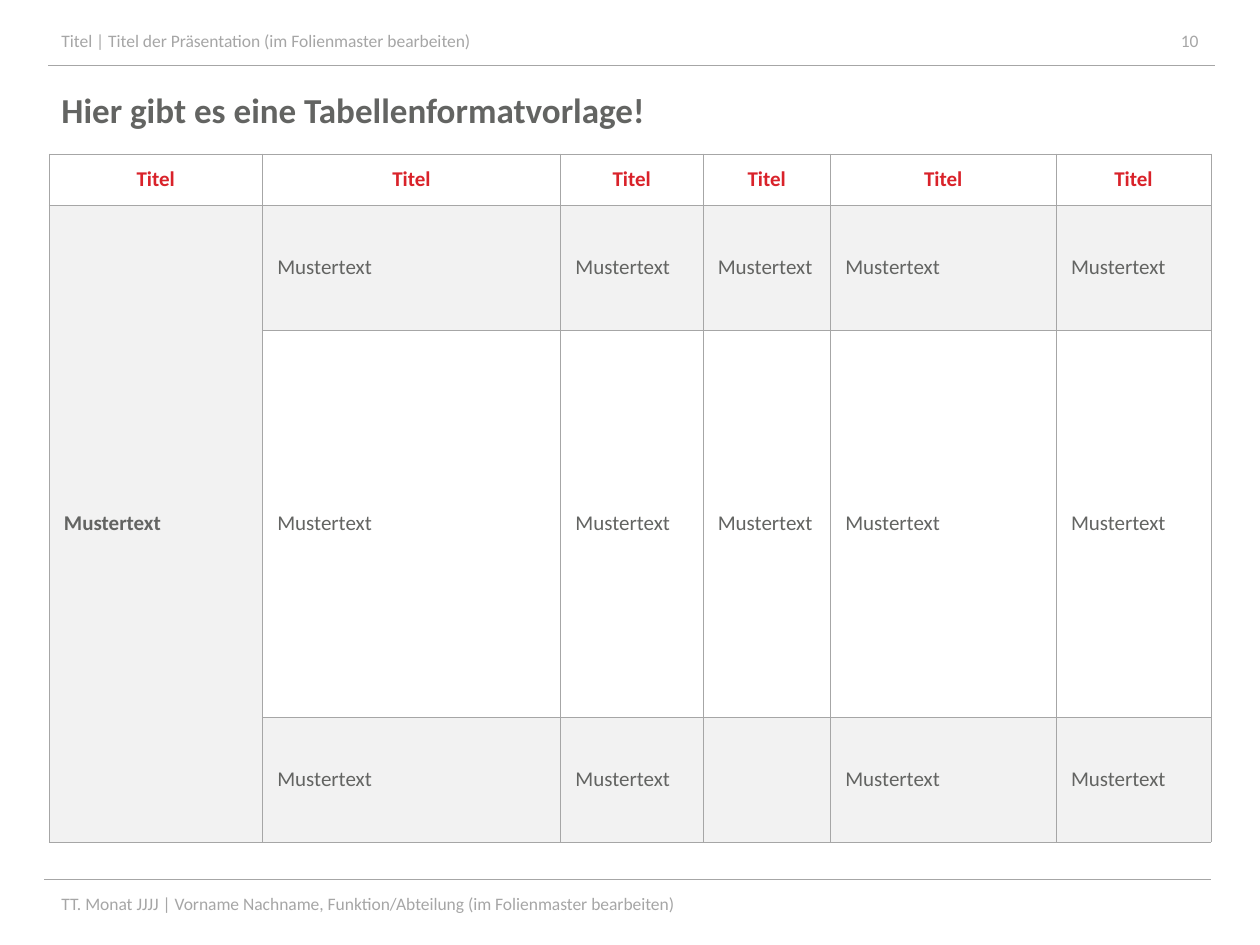
from dataclasses import dataclass

from lxml import etree
from pptx import Presentation
from pptx.dml.color import RGBColor
from pptx.enum.shapes import MSO_CONNECTOR
from pptx.enum.text import MSO_ANCHOR, PP_ALIGN
from pptx.oxml.ns import qn
from pptx.slide import Slide
from pptx.table import Table, _Cell
from pptx.text.text import _Paragraph
from pptx.util import Cm, Pt

STRAIGHT = MSO_CONNECTOR.STRAIGHT
TOP, MIDDLE = MSO_ANCHOR.TOP, MSO_ANCHOR.MIDDLE
LEFT, CENTER, RIGHT = PP_ALIGN.LEFT, PP_ALIGN.CENTER, PP_ALIGN.RIGHT

FONT = "Calibri"
GREY, DARK, RED, BAND = "A6A6A6", "636462", "D9222A", "F2F2F2"
RULE_WIDTH = Pt(0.25)

COLUMN_WIDTHS = [4.3, 6.01, 2.87, 2.57, 4.55, 3.12]
ROW_HEIGHTS = [1.03, 2.52, 7.8, 2.52]
SAMPLE = "Mustertext"
ROWS = [
    ["Titel"] * 6,
    [SAMPLE] * 6,
    [""] + [SAMPLE] * 5,
    ["", SAMPLE, SAMPLE, "", SAMPLE, SAMPLE],
]


@dataclass
class TextStyle:
    size: int
    color: str
    bold: bool = False
    alignment: PP_ALIGN = LEFT


@dataclass
class Label:
    text: str
    left: float
    top: float
    width: float
    height: float
    style: TextStyle
    anchor: MSO_ANCHOR = TOP


@dataclass
class Rule:
    left: float
    top: float
    width: float


SMALL = TextStyle(10, GREY)
HEADING = TextStyle(20, DARK, bold=True)
PAGE_NUMBER = TextStyle(10, GREY, alignment=RIGHT)
COLUMN_TITLE = TextStyle(12, RED, bold=True, alignment=CENTER)
ROW_TITLE = TextStyle(12, DARK, bold=True)
BODY = TextStyle(12, DARK)

LABELS = [
    Label("Titel | Titel der Präsentation (im Folienmaster bearbeiten)",
          0.99, 0.48, 17.7, 0.69, SMALL),
    Label("TT. Monat JJJJ | Vorname Nachname, Funktion/Abteilung (im Folienmaster bearbeiten)",
          0.99, 17.88, 17.7, 0.69, SMALL),
    Label("Hier gibt es eine Tabellenformatvorlage!", 0.99, 1.65, 17.7, 1.12, HEADING),
    Label("10", 18.69, 0.48, 5.72, 0.69, PAGE_NUMBER, MIDDLE),
]
RULES = [Rule(0.97, 1.32, 23.52), Rule(0.89, 17.73, 23.52)]


def rgb(color: str) -> RGBColor:
    return RGBColor.from_string(color)


def write(paragraph: _Paragraph, text: str, style: TextStyle) -> None:
    paragraph.text = text
    paragraph.alignment = style.alignment
    paragraph.font.name = FONT
    paragraph.font.size = Pt(style.size)
    paragraph.font.bold = style.bold
    paragraph.font.color.rgb = rgb(style.color)


def draw_label(slide: Slide, label: Label) -> None:
    shape = slide.shapes.add_textbox(
        Cm(label.left), Cm(label.top), Cm(label.width), Cm(label.height))
    shape.text_frame.word_wrap = True
    shape.text_frame.vertical_anchor = label.anchor
    write(shape.text_frame.paragraphs[0], label.text, label.style)


def draw_rule(slide: Slide, rule: Rule) -> None:
    connector = slide.shapes.add_connector(
        STRAIGHT, Cm(rule.left), Cm(rule.top), Cm(rule.left + rule.width), Cm(rule.top))
    connector.line.color.rgb = rgb(GREY)
    connector.line.width = RULE_WIDTH
    etree.SubElement(connector._element.spPr, qn("a:effectLst"))


def add_borders(cell: _Cell) -> None:
    properties = cell._tc.get_or_add_tcPr()
    for side in ("lnL", "lnR", "lnT", "lnB"):
        border = etree.SubElement(properties, qn(f"a:{side}"), w=str(RULE_WIDTH))
        fill = etree.SubElement(border, qn("a:solidFill"))
        etree.SubElement(fill, qn("a:srgbClr"), val=GREY)


def format_cell(cell: _Cell, text: str, row: int, column: int) -> None:
    add_borders(cell)
    if row % 2 or (row and column == 0):
        cell.fill.solid()
        cell.fill.fore_color.rgb = rgb(BAND)
    else:
        cell.fill.background()
    cell.vertical_anchor = MIDDLE
    if row:
        cell.margin_left = cell.margin_right = Cm(0.3)
        cell.margin_top = cell.margin_bottom = Cm(0.2)
    style = COLUMN_TITLE if row == 0 else ROW_TITLE if column == 0 else BODY
    write(cell.text_frame.paragraphs[0], text, style)


def draw_table(slide: Slide) -> Table:
    table = slide.shapes.add_table(
        len(ROW_HEIGHTS), len(COLUMN_WIDTHS), Cm(0.99), Cm(3.1),
        Cm(sum(COLUMN_WIDTHS)), Cm(sum(ROW_HEIGHTS))).table
    table.first_row = table.horz_banding = False
    for column, width in zip(table.columns, COLUMN_WIDTHS):
        column.width = Cm(width)
    for row, height in zip(table.rows, ROW_HEIGHTS):
        row.height = Cm(height)
    for row_index, texts in enumerate(ROWS):
        for column_index, text in enumerate(texts):
            format_cell(table.cell(row_index, column_index), text, row_index, column_index)
    table.cell(1, 0).merge(table.cell(3, 0))
    return table


def main() -> None:
    presentation = Presentation()
    presentation.slide_width, presentation.slide_height = Cm(25.4), Cm(19.05)
    slide = presentation.slides.add_slide(presentation.slide_layouts[6])
    for rule in RULES:
        draw_rule(slide, rule)
    for label in LABELS:
        draw_label(slide, label)
    draw_table(slide)
    presentation.save("out.pptx")


if __name__ == "__main__":
    main()
